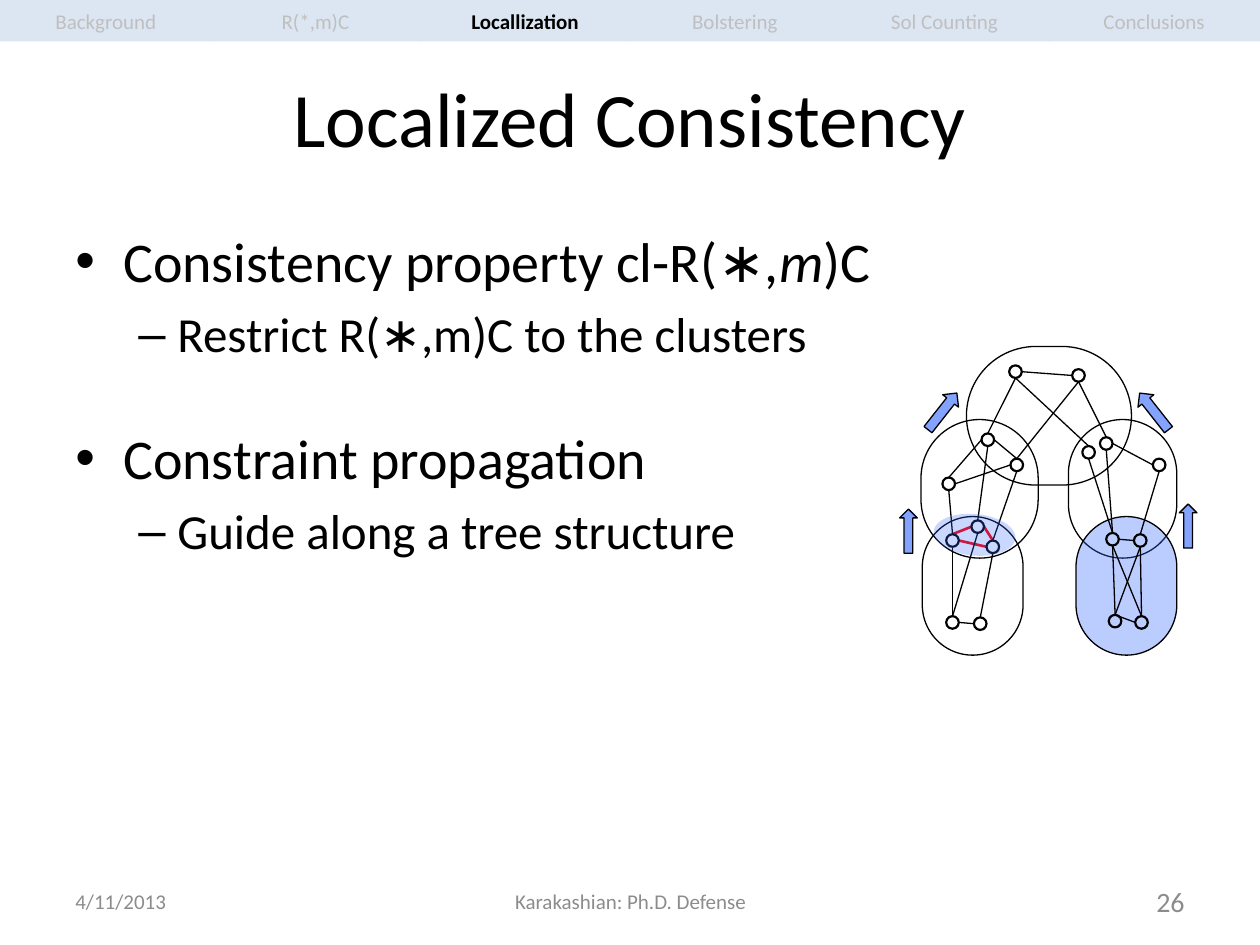
from lxml import etree
from pptx import Presentation, util as u
from pptx.dml.color import RGBColor
from pptx.enum import shapes, text
from pptx.oxml import ns

BLACK = RGBColor(0x00, 0x00, 0x00)
GRAY = RGBColor(0x8C, 0x8C, 0x8C)
PALE = RGBColor(0xBF, 0xBF, 0xBF)
BAND = RGBColor(0xDC, 0xE6, 0xF2)
BLUE = RGBColor(0x33, 0x66, 0xFF)
RED = RGBColor(0xFF, 0x00, 0x00)
KIND = shapes.MSO_SHAPE
LEFT, MID, RIGHT = text.PP_ALIGN.LEFT, text.PP_ALIGN.CENTER, text.PP_ALIGN.RIGHT

deck = Presentation()
deck.slide_width, deck.slide_height = u.Inches(10), u.Inches(7.5)
COL, ROW = deck.slide_width // 1000, deck.slide_height // 750
page = deck.slides.add_slide(deck.slide_layouts[6])


def draw(kind, x, y, w, h, fill=None, alpha=100, line=None, turn=0):
    item = page.shapes.add_shape(kind, round(x * COL), round(y * ROW), round(w * COL), round(h * ROW))
    item.shadow.inherit = False
    item.rotation = turn
    if kind == KIND.ROUNDED_RECTANGLE:
        item.adjustments[0] = 0.5
    if fill is None:
        item.fill.background()
    else:
        item.fill.solid()
        item.fill.fore_color.rgb = fill
        tint = item.fill._xPr.find(".//" + ns.qn("a:srgbClr"))
        etree.SubElement(tint, ns.qn("a:alpha"), val=str(alpha * 1000))
    if line is None:
        item.line.fill.background()
    else:
        item.line.color.rgb = BLACK
        item.line.width = u.Pt(line)
    return item


def write(para, words, color, align=LEFT, **form):
    para.alignment = align
    run = para.add_run()
    run.text = words
    run.font.color.rgb = color
    for name, value in {"name": "Calibri", **form}.items():
        setattr(run.font, name, value)


labels = [
    ("Localized Consistency", 50, 30, 900, 125, 44, BLACK, MID),
    ("4/11/2013", 50, 695, 233, 40, 12, GRAY, LEFT),
    ("Karakashian: Ph.D. Defense", 342, 695, 317, 40, 12, GRAY, MID),
    ("26", 717, 695, 233, 40, 16, GRAY, RIGHT),
]
for words, x, y, w, h, size, color, align in labels:
    frame = page.shapes.add_textbox(x * COL, y * ROW, w * COL, h * ROW).text_frame
    frame.word_wrap = True
    frame.vertical_anchor = text.MSO_ANCHOR.MIDDLE
    write(frame.paragraphs[0], words, color, align, size=u.Pt(size))

body = page.shapes.add_textbox(50 * COL, 175 * ROW, 667 * COL, 495 * ROW).text_frame
body.word_wrap = True
levels = [("•", 32, 38, -38), ("–", 28, 81, -31)]
points = [
    (0, 6.4, ["Consistency property cl-R(∗,", "m", ")C"]),
    (1, 5.6, ["Restrict R(∗,m)C to the clusters"]),
    (0, 35, ["Constraint propagation"]),
    (1, 5.6, ["Guide along a tree structure"]),
]
for i, (level, gap, parts) in enumerate(points):
    mark, size, edge, hang = levels[level]
    para = body.add_paragraph() if i else body.paragraphs[0]
    para.level = level
    para.space_before = u.Pt(gap)
    for part in parts:
        write(para, part, BLACK, size=u.Pt(size), italic=part == "m")
    props = para._p.get_or_add_pPr()
    props.set("marL", str(edge * COL))
    props.set("indent", str(hang * COL))
    etree.SubElement(props, ns.qn("a:buFont"), typeface="Arial")
    etree.SubElement(props, ns.qn("a:buChar"), char=mark)

bags = [
    (767, 275, 131, 110, None),
    (731, 333, 93, 110, None),
    (848, 333, 86, 110, None),
    (732, 410, 80, 110, None),
    (854, 410, 80, 110, BLUE),
]
for x, y, w, h, fill in bags:
    draw(KIND.ROUNDED_RECTANGLE, x, y, w, h, fill, 33, 0.75)

nodes = {
    "A": (806, 295), "B": (856, 298), "C": (784, 349), "D": (864, 359),
    "E": (807, 369), "F": (878, 352), "G": (920, 369), "H": (753, 384),
    "I": (776, 418), "J": (756, 429), "K": (788, 434), "L": (883, 428),
    "M": (905, 429), "N": (756, 494), "O": (778, 495), "P": (885, 493),
    "Q": (906, 494),
}
RAD = 5
sides = {"t": (0, -RAD), "b": (0, RAD), "l": (-RAD, 0), "r": (RAD, 0)}
edges = {
    (RED, 1.5): "JrKl JtIl IrKt",
    (BLACK, 0.75): "IbNt ArBl AbCt EtBb AbDt BbFt FrGl DbLt FbLt GbMt LrMl ClHt HbJt "
                   "EbKt HrEl CrEt JbNt OlNr KbOt MbPt LbPt PtQl QtLb QtMb CbIt",
}
for (color, width), pairs in edges.items():
    for a, s, b, t in pairs.split():
        ends = [((nodes[n][0] + sides[d][0]) * COL, (nodes[n][1] + sides[d][1]) * ROW)
                for n, d in ((a, s), (b, t))]
        link = page.shapes.add_connector(shapes.MSO_CONNECTOR.STRAIGHT, *ends[0], *ends[1])
        link.line.color.rgb = color
        link.line.width = u.Pt(width)
        etree.SubElement(link._element.spPr, ns.qn("a:effectLst"))

for x, y in nodes.values():
    draw(KIND.ROUNDED_RECTANGLE, x - RAD, y - RAD, 2 * RAD, 2 * RAD, line=1.25)

arrows = [
    (714, 404, 14, 35, 0),
    (936, 400, 14, 35, 0),
    (908, 308, 16, 37, -38.2),
    (740, 308, 16, 37, 38.2),
]
for x, y, w, h, turn in arrows:
    draw(KIND.UP_ARROW, x, y, w, h, BLUE, 60, 0.75, turn)
draw(KIND.OVAL, 741, 408, 65, 33, BLUE, 26, turn=5.2)

tabs = ["Background", "R(*,m)C", "Locallization", "Bolstering", "Sol Counting", "Conclusions"]
WIDE = 168
step = (1000 - WIDE) / (len(tabs) - 1)
for i, name in enumerate(tabs):
    frame = draw(KIND.RECTANGLE, i * step, 0, WIDE, 33, BAND).text_frame
    zero = dict.fromkeys(["margin_left", "margin_top", "margin_right", "margin_bottom"], 0)
    for key, value in {**zero, "vertical_anchor": text.MSO_ANCHOR.MIDDLE}.items():
        setattr(frame, key, value)
    now = name == "Locallization"
    write(frame.paragraphs[0], name, BLACK if now else PALE, MID, size=u.Pt(12), bold=now)

deck.save("out.pptx")
